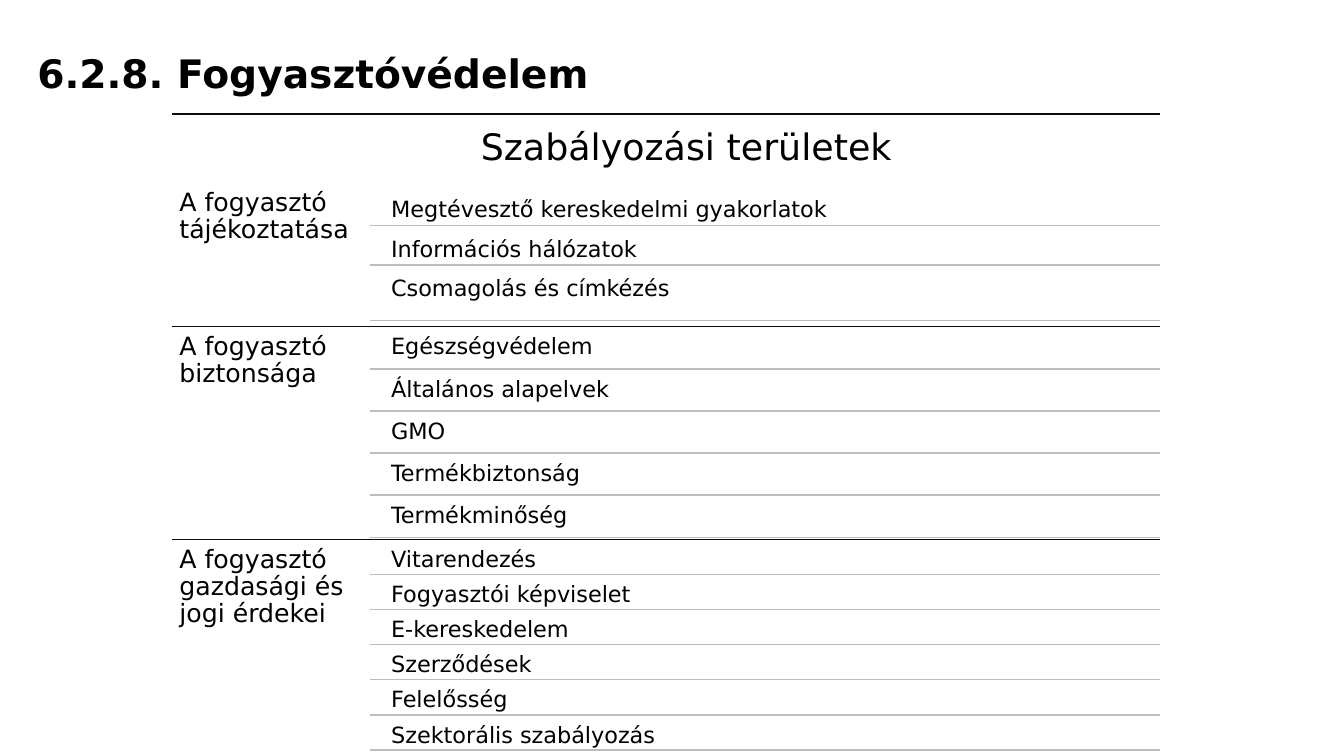
"""Build the consumer protection slide with its three regulated areas."""
from lxml.etree import SubElement
from pptx import Presentation
from pptx.dml.color import RGBColor
from pptx.enum.shapes import MSO_CONNECTOR as Connector
from pptx.enum.text import MSO_ANCHOR as Anchor, MSO_AUTO_SIZE as AutoSize, PP_ALIGN as Align
from pptx.oxml.ns import qn
from pptx.util import Inches, Pt

TITLE = "6.2.8. Fogyasztóvédelem"
HEADING = "Szabályozási területek"
AREAS = [
    {"label": "A fogyasztó tájékoztatása", "label_top": 1.81,
     "first": 1.9, "last": 2.68, "height": 0.34, "end": 3.18,
     "topics": ["Megtévesztő kereskedelmi gyakorlatok", "Információs hálózatok",
                "Csomagolás és címkézés"]},
    {"label": "A fogyasztó biztonsága", "label_top": 3.24,
     "first": 3.26, "last": 4.93, "height": 0.4, "end": 5.33,
     "topics": ["Egészségvédelem", "Általános alapelvek", "GMO",
                "Termékbiztonság", "Termékminőség"]},
    {"label": "A fogyasztó gazdasági és jogi érdekei", "label_top": 5.35,
     "first": 5.37, "last": 7.11, "height": 0.33, "end": 7.44,
     "topics": ["Vitarendezés", "Fogyasztói képviselet", "E-kereskedelem",
                "Szerződések", "Felelősség", "Szektorális szabályozás"]},
]
COLORS = {"text": "000000", "area": "0C0C0C", "topic": "BDBDBD"}
FONT = "DejaVu Sans"
LEFT, TOPIC_RULE, TOPIC_LEFT, RIGHT = 1.71, 3.67, 3.81, 11.51
FIRST_RULE, AREA_STEP = 1.13, 2.11


def write(box, text, size, bold=False, inset=None, spacing=0.9,
          anchor=Anchor.TOP, wrap=True, align=Align.LEFT):
    frame = box.text_frame
    frame.auto_size = AutoSize.NONE
    frame.word_wrap = wrap
    frame.vertical_anchor = anchor
    if inset is not None:
        frame.margin_left = frame.margin_right = Inches(inset)
        frame.margin_top = frame.margin_bottom = Inches(inset)
    para = frame.paragraphs[0]
    para.alignment = align
    para.line_spacing = spacing
    span = para.add_run()
    span.text = text
    span.font.name = FONT
    span.font.size = Pt(size)
    span.font.bold = bold
    span.font.color.rgb = RGBColor.from_string(COLORS["text"])


def add_text(page, text, left, top, width, height, **style):
    box = page.shapes.add_textbox(Inches(left), Inches(top), Inches(width), Inches(height))
    write(box, text, **style)


def add_rule(page, left, top, color):
    rule = page.shapes.add_connector(
        Connector.STRAIGHT, Inches(left), Inches(top), Inches(RIGHT), Inches(top))
    rule.line.color.rgb = RGBColor.from_string(COLORS[color])
    rule.line.width = Pt(1)
    SubElement(rule._element.spPr, qn("a:effectLst"))


def add_area(page, area, rule_top):
    add_rule(page, LEFT, rule_top, "area")
    add_text(page, area["label"], LEFT, area["label_top"], TOPIC_RULE - LEFT,
             rule_top + AREA_STEP - area["label_top"], size=18, inset=0.07)
    final = len(area["topics"]) - 1
    step = (area["last"] - area["first"]) / final
    for index, topic in enumerate(area["topics"]):
        top = area["first"] + index * step
        add_text(page, topic, TOPIC_LEFT, top, RIGHT - TOPIC_LEFT, area["height"],
                 size=16, inset=0.07)
        bottom = area["end"] if index == final else top + area["height"]
        add_rule(page, TOPIC_RULE, bottom, "topic")


def main():
    deck = Presentation()
    deck.slide_width, deck.slide_height = Inches(13.33), Inches(7.5)
    page = deck.slides.add_slide(deck.slide_layouts[5])
    title = page.shapes.title
    title.left, title.top = Inches(0.27), Inches(0.13)
    title.width, title.height = Inches(11.39), Inches(1.25)
    write(title, TITLE, size=28, bold=True, anchor=Anchor.MIDDLE)
    for index, area in enumerate(AREAS):
        add_area(page, area, FIRST_RULE + index * AREA_STEP)
    add_text(page, HEADING, 4.67, 1.18, 4.31, 0.54, size=26, spacing=1, wrap=False)
    deck.save("out.pptx")


if __name__ == "__main__":
    main()
